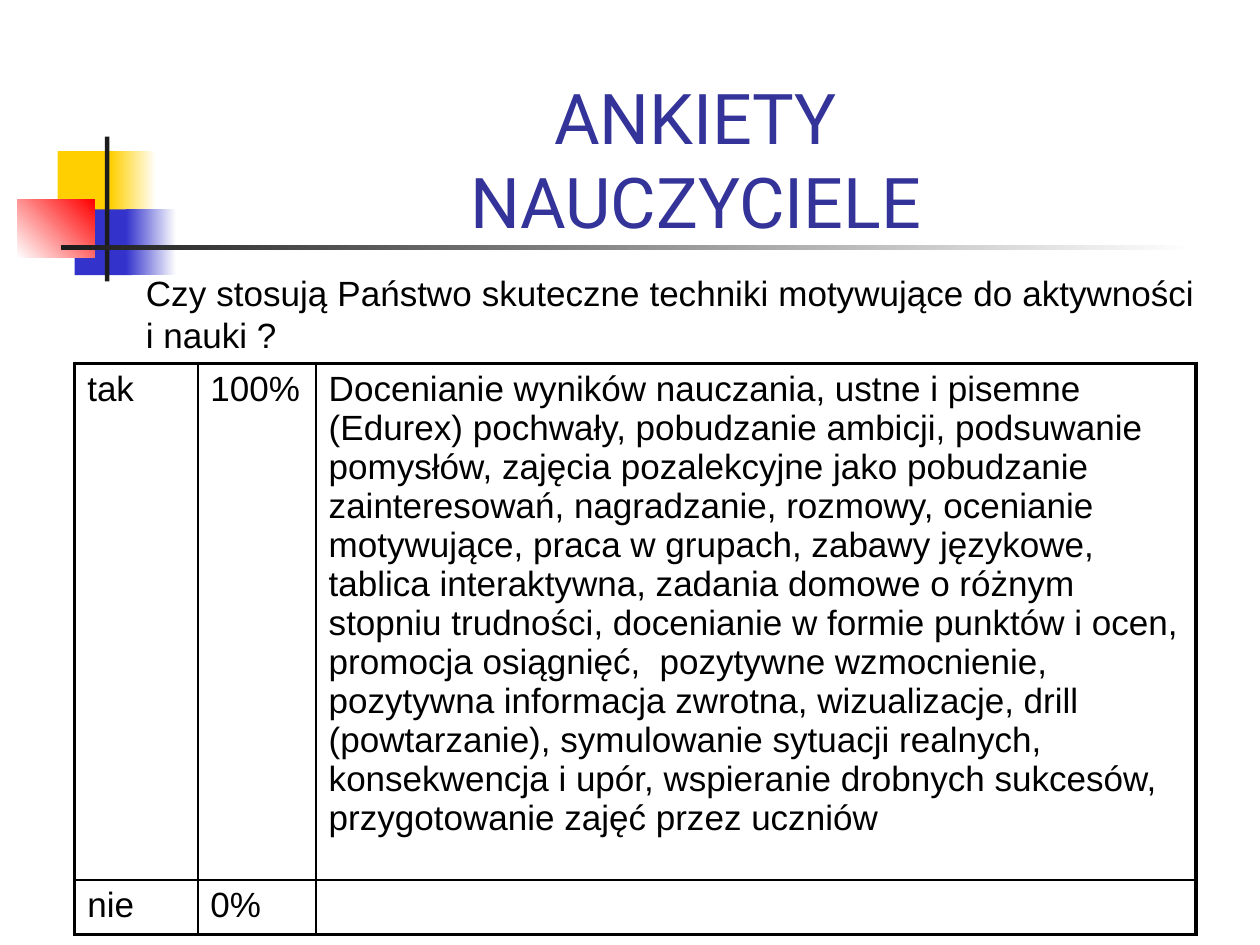
from pptx import Presentation
from pptx.dml.color import RGBColor
from pptx.enum.shapes import MSO_SHAPE as Shape
from pptx.enum.text import MSO_ANCHOR as Anchor, PP_ALIGN as Align
from pptx.oxml import parse_xml
from pptx.oxml.ns import nsdecls
from pptx.util import Pt

WHITE = RGBColor(0xFF, 0xFF, 0xFF)
BLACK = RGBColor(0, 0, 0)
DARK = RGBColor(0x1C, 0x1C, 0x1C)
GOLD = RGBColor(0xFF, 0xCF, 0x01)
BLUE = RGBColor(0x33, 0x33, 0xCC)
RED = RGBColor(0xFF, 0, 0)
NAVY = RGBColor(0x33, 0x33, 0x99)

BODY = ("Arial", 20, BLACK)
HEAD = ("Roboto", 40, NAVY)
THIN, THICK = 1, 2.25

TITLE = ["ANKIETY", "NAUCZYCIELE"]
ASK = "Czy stosują Państwo skuteczne techniki motywujące do aktywności i nauki ?"
REPLY = (
    "Docenianie wyników nauczania, ustne i pisemne (Edurex) pochwały, "
    "pobudzanie ambicji, podsuwanie pomysłów, zajęcia pozalekcyjne jako "
    "pobudzanie zainteresowań, nagradzanie, rozmowy, ocenianie motywujące, "
    "praca w grupach, zabawy językowe, tablica interaktywna, zadania domowe "
    "o różnym stopniu trudności, docenianie w formie punktów i ocen, promocja "
    "osiągnięć,  pozytywne wzmocnienie, pozytywna informacja zwrotna, "
    "wizualizacje, drill (powtarzanie), symulowanie sytuacji realnych, "
    "konsekwencja i upór, wspieranie drobnych sukcesów, przygotowanie zajęć "
    "przez uczniów"
)
ROWS = [["tak", "100%", REPLY], ["nie", "0%", ""]]


class Deck:
    def __init__(self, slide):
        self.slide = slide

    def style(self, para, look, gap, align=Align.LEFT):
        name, size, color = look
        para.font.name = name
        para.font.size = Pt(size)
        para.font.color.rgb = color
        para.line_spacing = Pt(gap)
        para.alignment = align

    def block(self, box, color, end=None, angle=0):
        shape = self.slide.shapes.add_shape(Shape.RECTANGLE, *map(Pt, box))
        shape.shadow.inherit = False
        shape.line.fill.background()
        fill = shape.fill
        if end is None:
            fill.solid()
            fill.fore_color.rgb = color
            return
        fill.gradient()
        fill.gradient_angle = angle
        for stop, tint in zip(fill.gradient_stops, (color, end)):
            stop.color.rgb = tint

    def text(self, box, lines, look, gap, align, anchor):
        frame = self.slide.shapes.add_textbox(*map(Pt, box)).text_frame
        frame.word_wrap = True
        frame.vertical_anchor = anchor
        frame.text = "\n".join(lines)
        for para in frame.paragraphs:
            self.style(para, look, gap, align)

    def edge(self, cell, sides):
        props = cell._tc.get_or_add_tcPr()
        for index, (side, width) in enumerate(sides.items()):
            props.insert(index, parse_xml(
                f'<a:ln{side} {nsdecls("a")} w="{Pt(width)}"><a:solidFill>'
                f'<a:srgbClr val="{BLACK}"/></a:solidFill></a:ln{side}>'))

    def table(self, box, rows, wide, high, look, gap):
        count, span = len(rows), len(wide)
        grid = self.slide.shapes.add_table(count, span, *map(Pt, box)).table
        grid.first_row = grid.horz_banding = False
        for col, width in zip(grid.columns, wide):
            col.width = Pt(width)
        for row, height in zip(grid.rows, high):
            row.height = Pt(height)
        for r, row in enumerate(rows):
            for c, words in enumerate(row):
                cell = grid.cell(r, c)
                cell.text = words
                cell.fill.background()
                self.style(cell.text_frame.paragraphs[0], look, gap)
                outer = {"L": c == 0, "R": c == span - 1,
                         "T": r == 0, "B": r == count - 1}
                self.edge(cell, {side: THICK if out else THIN
                                 for side, out in outer.items()})


def main():
    show = Presentation()
    show.slide_width, show.slide_height = Pt(720), Pt(540)
    deck = Deck(show.slides.add_slide(show.slide_layouts[6]))

    deck.block((33, 86.4, 34.5, 37.5), GOLD)
    deck.block((63.2, 86.4, 26, 37.5), GOLD, WHITE)
    deck.block((42.7, 119.7, 33, 37.5), BLUE)
    deck.block((72, 119.7, 28.7, 37.5), BLUE, WHITE)
    deck.block((10, 113.8, 44, 33.3), WHITE, RED, 45)
    deck.block((60, 78, 2.5, 82.8), DARK)
    deck.block((34.7, 140.2, 648, 2.4), DARK, WHITE)

    deck.text((76.3, 116.6, 613.5, 90), [ASK], BODY, 24,
              Align.JUSTIFY, Anchor.BOTTOM)
    deck.table((42.7, 207.6, 640.8, 326.2), ROWS, (70.4, 67.6, 502.8),
               (295.2, 31), BODY, 22.3)
    deck.text((90.7, 39, 613.5, 90), TITLE, HEAD, 48,
              Align.CENTER, Anchor.TOP)
    show.save("out.pptx")


if __name__ == "__main__":
    main()
